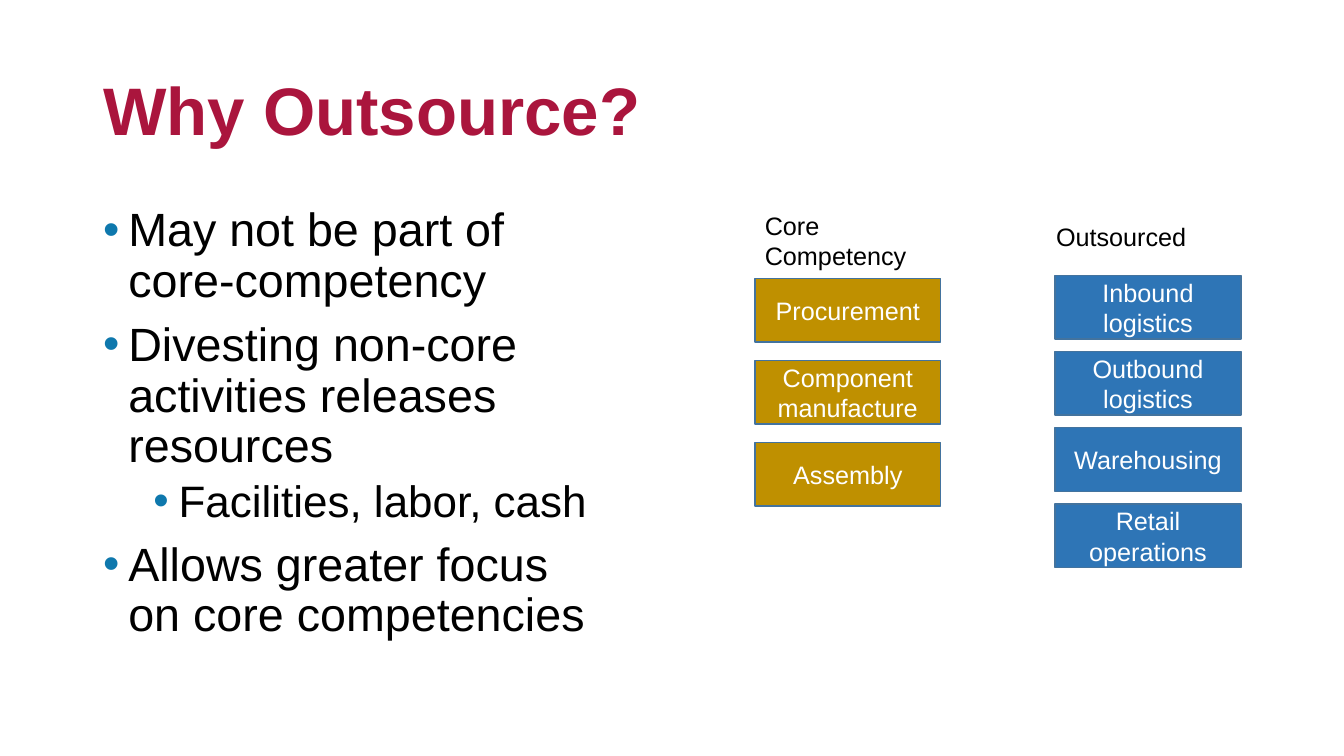
from dataclasses import dataclass

from lxml import etree
from pptx import Presentation
from pptx import util as u
from pptx.dml.color import RGBColor
from pptx.enum import shapes, text
from pptx.oxml.ns import qn


@dataclass(frozen=True)
class Theme:
    font: str = "Arial"
    title_color: str = "AA153D"
    bullet_color: str = "0E78AD"
    text_color: str = "000000"
    box_text: str = "FFFFFF"
    box_line: str = "43739E"
    core: str = "BF9000"
    outsourced: str = "2E75B6"
    title_size: float = 48
    level_sizes: tuple = (33.3, 31.4)
    label_size: float = 18


class SlideBuilder:
    """Places elements on a grid of 12 columns by 12 rows."""

    def __init__(self, presentation, theme):
        self.theme = theme
        self.column = presentation.slide_width / 12
        self.row = presentation.slide_height / 12
        self.slide = presentation.slides.add_slide(presentation.slide_layouts[1])

    def area(self, left, top, width, height):
        return (round(left * self.column), round(top * self.row),
                round(width * self.column), round(height * self.row))

    def place(self, shape, *cells):
        shape.left, shape.top, shape.width, shape.height = self.area(*cells)

    def style(self, paragraph, size, color, bold=False):
        font = paragraph.font
        font.name, font.size, font.bold = self.theme.font, u.Pt(size), bold
        font.color.rgb = RGBColor.from_string(color)

    def title(self, words, *cells):
        shape = self.slide.shapes.title
        self.place(shape, *cells)
        frame = shape.text_frame
        frame.text = words
        frame.auto_size = text.MSO_AUTO_SIZE.NONE
        frame.vertical_anchor = text.MSO_ANCHOR.MIDDLE
        paragraph = frame.paragraphs[0]
        paragraph.alignment = text.PP_ALIGN.LEFT
        paragraph.line_spacing = 0.9
        self.style(paragraph, self.theme.title_size, self.theme.title_color, bold=True)

    def bullets(self, items, *cells):
        shape = self.slide.placeholders[1]
        self.place(shape, *cells)
        frame = shape.text_frame
        frame.text = "\n".join(words for level, words in items)
        frame.auto_size = text.MSO_AUTO_SIZE.NONE
        for paragraph, (level, words) in zip(frame.paragraphs, items):
            paragraph.level = level
            paragraph.line_spacing = 0.9
            paragraph.space_before = u.Pt(5 if level else 10)
            self.style(paragraph, self.theme.level_sizes[level], self.theme.text_color)
            self.bullet(paragraph, 0.25 + 0.5 * level)

    def bullet(self, paragraph, indent):
        properties = paragraph._p.get_or_add_pPr()
        properties.set("marL", str(u.Inches(indent)))
        properties.set("indent", str(u.Inches(-0.25)))
        color = etree.SubElement(properties, qn("a:buClr"))
        etree.SubElement(color, qn("a:srgbClr"), val=self.theme.bullet_color)
        etree.SubElement(properties, qn("a:buFont"), typeface=self.theme.font)
        etree.SubElement(properties, qn("a:buChar"), char="•")

    def label(self, group, words, *cells):
        frame = group.shapes.add_textbox(*self.area(*cells)).text_frame
        frame.word_wrap = True
        frame.text = words
        self.style(frame.paragraphs[0], self.theme.label_size, self.theme.text_color)

    def box(self, group, words, fill, *cells):
        shape = group.shapes.add_shape(shapes.MSO_SHAPE.RECTANGLE, *self.area(*cells))
        shape.shadow.inherit = False
        shape.fill.solid()
        shape.fill.fore_color.rgb = RGBColor.from_string(fill)
        shape.line.color.rgb = RGBColor.from_string(self.theme.box_line)
        shape.line.width = u.Pt(1)
        frame = shape.text_frame
        frame.text = words
        frame.word_wrap = True
        frame.vertical_anchor = text.MSO_ANCHOR.MIDDLE
        paragraph = frame.paragraphs[0]
        paragraph.alignment = text.PP_ALIGN.CENTER
        self.style(paragraph, self.theme.label_size, self.theme.box_text)

    def stack(self, heading, heading_cells, names, fill, left, top, pitch):
        group = self.slide.shapes.add_group_shape()
        self.label(group, heading, *heading_cells)
        for index, name in enumerate(names):
            self.box(group, name, fill, left, top + index * pitch, 1.66, 1.01)


def main():
    presentation = Presentation()
    presentation.slide_width = u.Inches(13.33)
    presentation.slide_height = u.Inches(7.5)
    theme = Theme()
    builder = SlideBuilder(presentation, theme)

    # Title and reasons
    builder.title("Why Outsource?", 0.83, 0.64, 8.74, 2.32)
    builder.bullets([
        (0, "May not be part of core-competency"),
        (0, "Divesting non-core activities releases resources"),
        (1, "Facilities, labor, cash"),
        (0, "Allows greater focus on core competencies"),
    ], 0.83, 3.2, 4.64, 7.62)

    # Activities kept in house
    builder.stack("Core Competency", (6.74, 3.26, 1.9, 1.14),
                  ["Procurement", "Component manufacture", "Assembly"],
                  theme.core, left=6.74, top=4.42, pitch=1.3)

    # Activities handed to suppliers
    builder.stack("Outsourced", (9.34, 3.44, 1.82, 0.64),
                  ["Inbound logistics", "Outbound logistics", "Warehousing",
                   "Retail operations"],
                  theme.outsourced, left=9.42, top=4.37, pitch=1.21)

    presentation.save("out.pptx")


if __name__ == "__main__":
    main()
